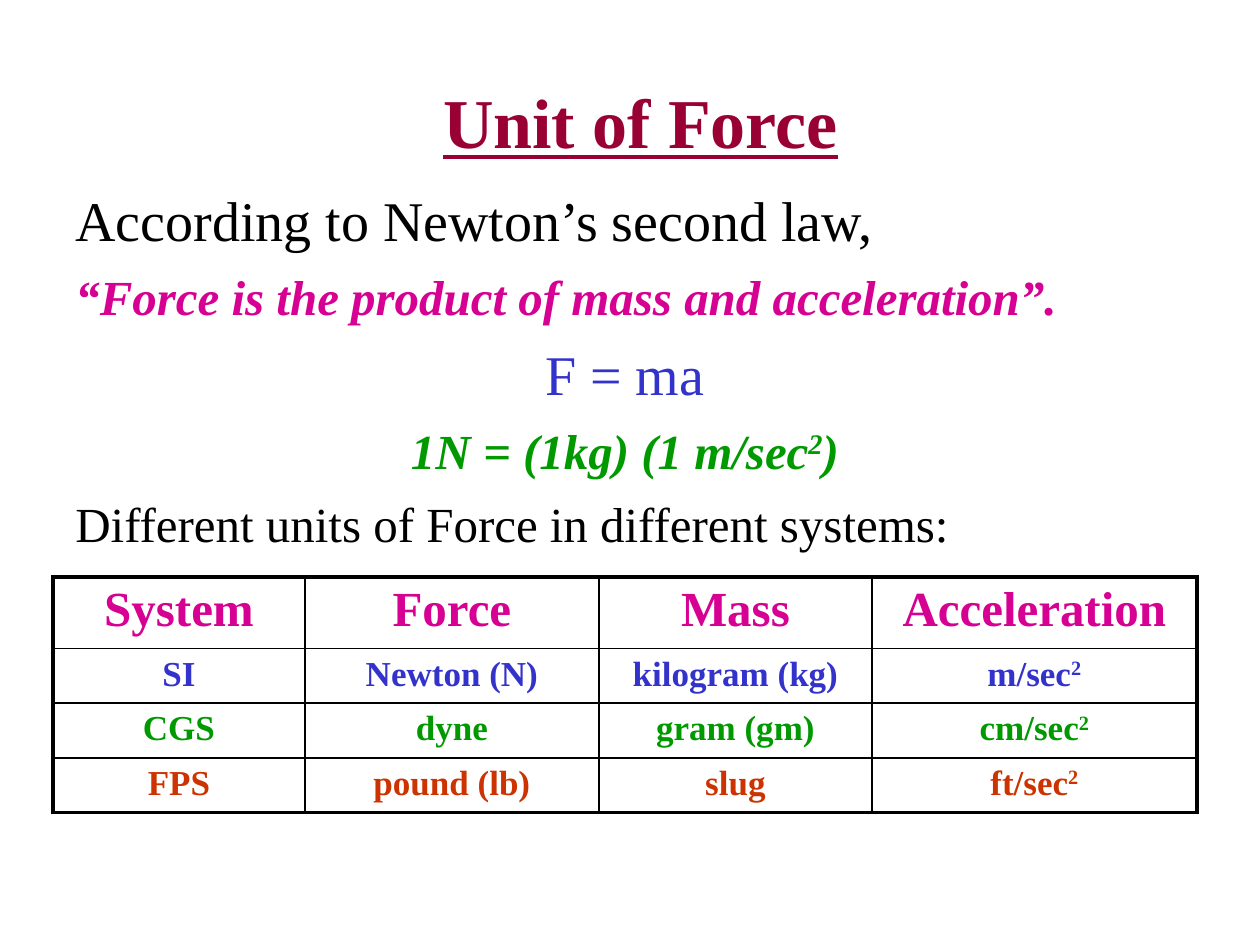
from dataclasses import dataclass

from lxml.etree import SubElement
from pptx import Presentation
from pptx.dml.color import RGBColor as RGB
from pptx.enum.text import MSO_ANCHOR as Anchor, PP_ALIGN as Align
from pptx.oxml.ns import qn
from pptx.util import Emu, Pt

SCALE = 914400 // 126


@dataclass(frozen=True)
class Theme:
    """Colours, typeface and type sizes of the slide."""
    font: str = "Times New Roman"
    maroon: str = "990033"
    black: str = "000000"
    magenta: str = "D60093"
    blue: str = "3333CC"
    green: str = "009900"
    orange: str = "CC3300"
    title: int = 40
    large: int = 32
    medium: int = 28
    small: int = 20
    gap: int = 8
    inner_line: float = 1
    outer_line: float = 2.25


THEME = Theme()


def px(length):
    """Turn whole pixels into EMU."""
    return Emu(length * SCALE)


def write(paragraph, text, size, color, align=Align.LEFT, bold=False, italic=False,
          underline=False):
    """Write one styled paragraph, raising whatever stands between carets."""
    paragraph.alignment = align
    for index, part in enumerate(text.split("^")):
        if not part:
            continue
        run = paragraph.add_run()
        run.text = part
        font = run.font
        font.name, font.size = THEME.font, Pt(size)
        font.bold, font.italic, font.underline = bold, italic, underline
        font.color.rgb = RGB.from_string(color)
        if index % 2:
            run._r.get_or_add_rPr().set("baseline", "30000")


def add_frame(slide, box, anchor):
    """Add a wrapping text box and return its text frame."""
    frame = slide.shapes.add_textbox(*map(px, box)).text_frame
    frame.word_wrap = True
    frame.vertical_anchor = anchor
    return frame


def add_heading(slide, box):
    """Place the underlined heading."""
    heading = add_frame(slide, box, Anchor.MIDDLE)
    write(heading.paragraphs[0], "Unit of Force", THEME.title, THEME.maroon,
          Align.CENTER, bold=True, underline=True)


def add_law(slide, box):
    """Place the statement of the law and its formulas."""
    law = add_frame(slide, box, Anchor.TOP)
    lines = [
        ("According to Newton’s second law,", THEME.large, THEME.black, Align.LEFT, False),
        ("“Force is the product of mass and acceleration”.", THEME.medium,
         THEME.magenta, Align.LEFT, True),
        ("F = ma", THEME.large, THEME.blue, Align.CENTER, False),
        ("1N = (1kg) (1 m/sec^2^)", THEME.medium, THEME.green, Align.CENTER, True),
        ("Different units of Force in different systems:", THEME.medium,
         THEME.black, Align.LEFT, False),
    ]
    for index, (text, size, color, align, strong) in enumerate(lines):
        paragraph = law.add_paragraph() if index else law.paragraphs[0]
        paragraph.space_before = Pt(THEME.gap)
        write(paragraph, text, size, color, align, strong, strong)


def set_borders(cell, widths):
    """Draw the left, right, top and bottom borders of a cell."""
    properties = cell._tc.get_or_add_tcPr()
    for position, (side, width) in enumerate(zip(("lnL", "lnR", "lnT", "lnB"), widths)):
        line = properties.makeelement(qn(f"a:{side}"), {"w": str(Pt(width))})
        fill = SubElement(line, qn("a:solidFill"))
        SubElement(fill, qn("a:srgbClr"), {"val": THEME.black})
        properties.insert(position, line)


def add_units(slide, box):
    """Place the table of units, with a heavier outer frame."""
    rows = [
        (THEME.medium, THEME.magenta, 67, ("System", "Force", "Mass", "Acceleration")),
        (THEME.small, THEME.blue, 54, ("SI", "Newton (N)", "kilogram (kg)", "m/sec^2^")),
        (THEME.small, THEME.green, 54, ("CGS", "dyne", "gram (gm)", "cm/sec^2^")),
        (THEME.small, THEME.orange, 54, ("FPS", "pound (lb)", "slug", "ft/sec^2^")),
    ]
    widths = (252, 294, 273, 325)
    last_row, last_column = len(rows) - 1, len(widths) - 1
    units = slide.shapes.add_table(len(rows), len(widths), *map(px, box)).table
    for column, width in zip(units.columns, widths):
        column.width = px(width)
    for r, (size, color, height, entries) in enumerate(rows):
        units.rows[r].height = px(height)
        for c, entry in enumerate(entries):
            cell = units.cell(r, c)
            cell.fill.background()
            write(cell.text_frame.paragraphs[0], entry, size, color, Align.CENTER, bold=True)
            edges = (c == 0, c == last_column, r == 0, r == last_row)
            set_borders(cell, [THEME.outer_line if edge else THEME.inner_line
                               for edge in edges])


def main():
    """Build and save the slide."""
    deck = Presentation()
    deck.slide_width, deck.slide_height = px(1260), px(945)
    slide = deck.slides.add_slide(deck.slide_layouts[6])
    add_heading(slide, (105, 63, 1071, 116))
    add_law(slide, (63, 179, 1124, 577))
    add_units(slide, (53, 577, 1144, 229))
    deck.save("out.pptx")


if __name__ == "__main__":
    main()
